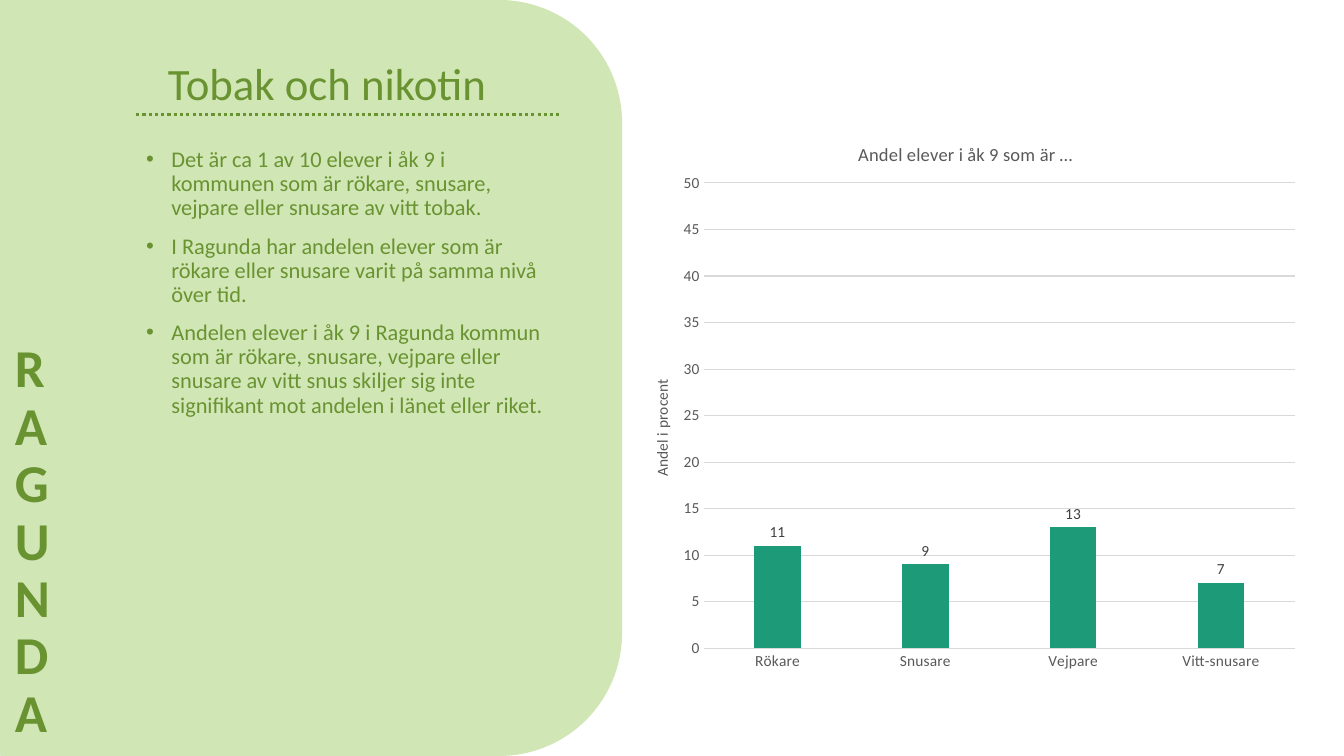
from lxml.etree import SubElement
from pptx import Presentation
from pptx.chart.data import CategoryChartData
from pptx.dml.color import RGBColor
from pptx.enum.chart import XL_CHART_TYPE, XL_LABEL_POSITION, XL_TICK_MARK
from pptx.enum.dml import MSO_LINE
from pptx.enum.shapes import MSO_CONNECTOR, MSO_SHAPE
from pptx.enum.text import MSO_ANCHOR, MSO_AUTO_SIZE, PP_ALIGN
from pptx.oxml import parse_xml
from pptx.oxml.ns import nsdecls, qn
from pptx.util import Inches, Pt

COLORS = {"pale": "D1E6B5", "leaf": "699331", "teal": "1D9A78",
          "grid": "D9D9D9", "gray": "595959", "dark": "404040"}
FACTS = [
    "Det är ca 1 av 10 elever i åk 9 i kommunen som är rökare, snusare, "
    "vejpare eller snusare av vitt tobak.",
    "I Ragunda har andelen elever som är rökare eller snusare varit på "
    "samma nivå över tid.",
    "Andelen elever i åk 9 i Ragunda kommun som är rökare, snusare, vejpare "
    "eller snusare av vitt snus skiljer sig inte signifikant mot andelen i "
    "länet eller riket.",
]
SHARES = {"Rökare": 11, "Snusare": 9, "Vejpare": 13, "Vitt-snusare": 7}


def color(name):
    return RGBColor.from_string(COLORS[name])


def style(font, size, name, bold=False):
    font.name = "Calibri"
    font.size = Pt(size)
    font.bold = bold
    font.color.rgb = color(name)


def place(shape, x, y, w, h):
    shape.left, shape.top = Inches(x), Inches(y)
    shape.width, shape.height = Inches(w), Inches(h)


def write(frame, lines, size=16, name="leaf", bold=False, space=0.9,
          before=0, align=None, anchor=None, bullet=False):
    frame.word_wrap = True
    frame.auto_size = MSO_AUTO_SIZE.NONE
    if anchor is not None:
        frame.vertical_anchor = anchor
    for i, line in enumerate(lines):
        para = frame.paragraphs[0] if i == 0 else frame.add_paragraph()
        para.line_spacing = space
        para.space_before = Pt(before)
        para.alignment = align
        run = para.add_run()
        run.text = line
        style(run.font, size, name, bold)
        if bullet:
            props = para._p.get_or_add_pPr()
            props.set("marL", str(Inches(0.25)))
            props.set("indent", str(-Inches(0.25)))
            SubElement(props, qn("a:buFont")).set("typeface", "Arial")
            SubElement(props, qn("a:buChar")).set("char", "•")


def add_panel(slide, x, y, w, h):
    panel = slide.shapes.add_shape(MSO_SHAPE.ROUNDED_RECTANGLE, 0, 0, 0, 0)
    place(panel, x, y, w, h)
    panel.shadow.inherit = False
    panel.fill.solid()
    panel.fill.fore_color.rgb = color("pale")
    panel.line.fill.background()
    tree = slide.shapes._spTree
    tree.remove(panel._element)
    tree.insert(2, panel._element)

    title, body = slide.placeholders
    place(title, x + 2.25, y + 0.28, 4.27, 0.86)
    write(title.text_frame, ["Tobak och nikotin"], size=32,
          align=PP_ALIGN.CENTER, anchor=MSO_ANCHOR.BOTTOM)
    place(body, x + 2.49, y + 1.42, 4.2, 3.73)
    body.fill.solid()
    body.fill.fore_color.rgb = color("pale")
    write(body.text_frame, FACTS, before=10, bullet=True)

    rule = slide.shapes.add_connector(
        MSO_CONNECTOR.STRAIGHT, Inches(x + 2.49), Inches(y + 1.14),
        Inches(x + 6.7), Inches(y + 1.14))
    rule.line.color.rgb = color("leaf")
    rule.line.width = Pt(2.25)
    rule.line.dash_style = MSO_LINE.ROUND_DOT
    SubElement(rule._element.spPr, qn("a:effectLst"))


def add_place(slide, x, y, w, h):
    box = slide.shapes.add_textbox(0, 0, 0, 0)
    place(box, x, y, w, h)
    write(box.text_frame, ["RAGUNDA"], size=38, bold=True,
          anchor=MSO_ANCHOR.BOTTOM)
    box.text_frame._txBody.bodyPr.set("vert", "wordArtVert")


def layout(parent, x, y, w=None, h=None):
    parts = {"xMode": "edge", "yMode": "edge", "x": x, "y": y}
    if w:
        parts = {"layoutTarget": "inner", **parts, "w": w, "h": h}
    rows = "".join(f'<c:{k} val="{v}"/>' for k, v in parts.items())
    for old in parent.findall(qn("c:layout")):
        parent.remove(old)
    node = parse_xml(f'<c:layout {nsdecls("c")}><c:manualLayout>{rows}'
                     '</c:manualLayout></c:layout>')
    text = parent.find(qn("c:tx"))
    parent.insert(0 if text is None else 1, node)


def add_label(owner, text, size, x, y):
    title = owner.chart_title if hasattr(owner, "chart_title") else owner.axis_title
    write(title.text_frame, [text], size=size, name="gray", space=1)
    layout(title._element, x, y)


def add_graph(slide, x, y, w, h):
    data = CategoryChartData(number_format="0")
    data.categories = list(SHARES)
    data.add_series("Series 1", list(SHARES.values()))
    chart = slide.shapes.add_chart(
        XL_CHART_TYPE.COLUMN_CLUSTERED, Inches(x), Inches(y),
        Inches(w), Inches(h), data).chart
    style(chart.font, 11, "gray")
    chart.has_legend = False
    add_label(chart, "Andel elever i åk 9 som är …", 13.2, 0.34, 0.04)

    cats, vals = chart.category_axis, chart.value_axis
    for axis in (cats, vals):
        axis.major_tick_mark = axis.minor_tick_mark = XL_TICK_MARK.NONE
        style(axis.tick_labels.font, 11, "gray")
    vals.minimum_scale, vals.maximum_scale, vals.major_unit = 0, 50, 5
    vals.tick_labels.number_format = "0"
    vals.tick_labels.number_format_is_linked = False
    vals.format.line.fill.background()
    for line in (cats.format.line, vals.major_gridlines.format.line):
        line.color.rgb = color("grid")
        line.width = Pt(0.75)
    add_label(vals, "Andel i procent", 11, 0.04, 0.46)

    plot = chart.plots[0]
    plot.vary_by_categories = False
    plot.gap_width, plot.overlap = 219, -27
    fill = plot.series[0].format.fill
    fill.solid()
    fill.fore_color.rgb = color("teal")
    plot.has_data_labels = True
    labels = plot.data_labels
    labels.show_value = True
    labels.position = XL_LABEL_POSITION.OUTSIDE_END
    labels.number_format = "0"
    labels.number_format_is_linked = False
    style(labels.font, 11, "dark")
    layout(chart._chartSpace.chart.plotArea, 0.12, 0.12, 0.86, 0.82)


def main():
    deck = Presentation()
    deck.slide_width, deck.slide_height = Inches(13.33), Inches(7.5)
    slide = deck.slides.add_slide(deck.slide_layouts[1])
    add_panel(slide, -1.14, 0, 7.31, 7.5)
    add_place(slide, 0.05, 1.07, 1.05, 6.36)
    add_graph(slide, 6.16, 1.14, 6.82, 5.63)
    deck.save("out.pptx")


if __name__ == "__main__":
    main()
